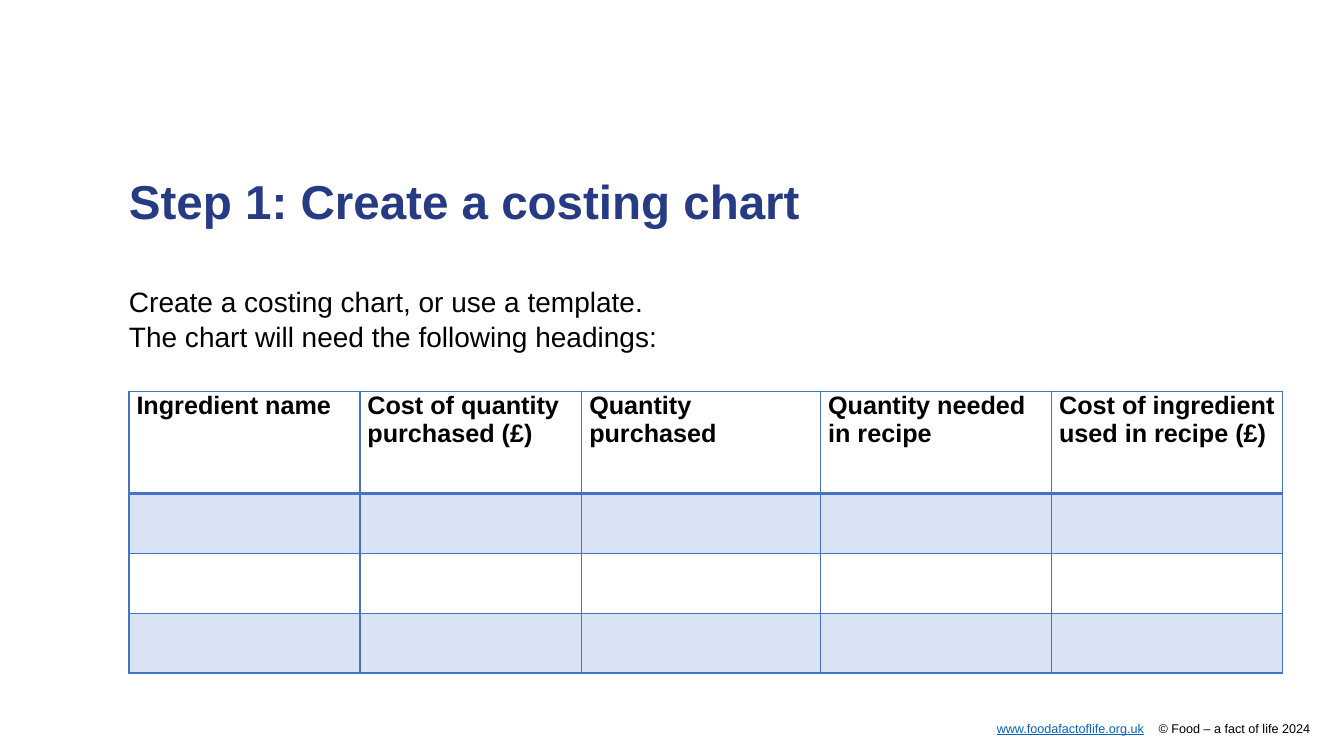
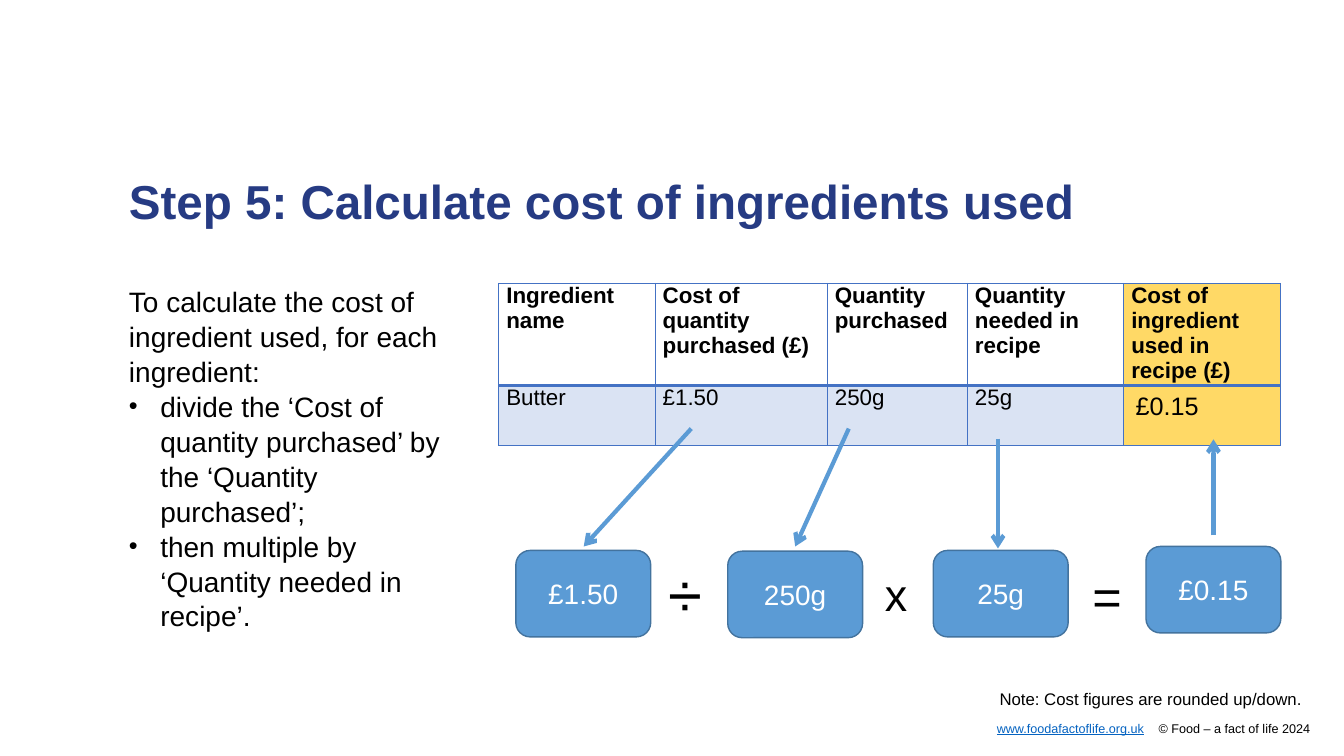
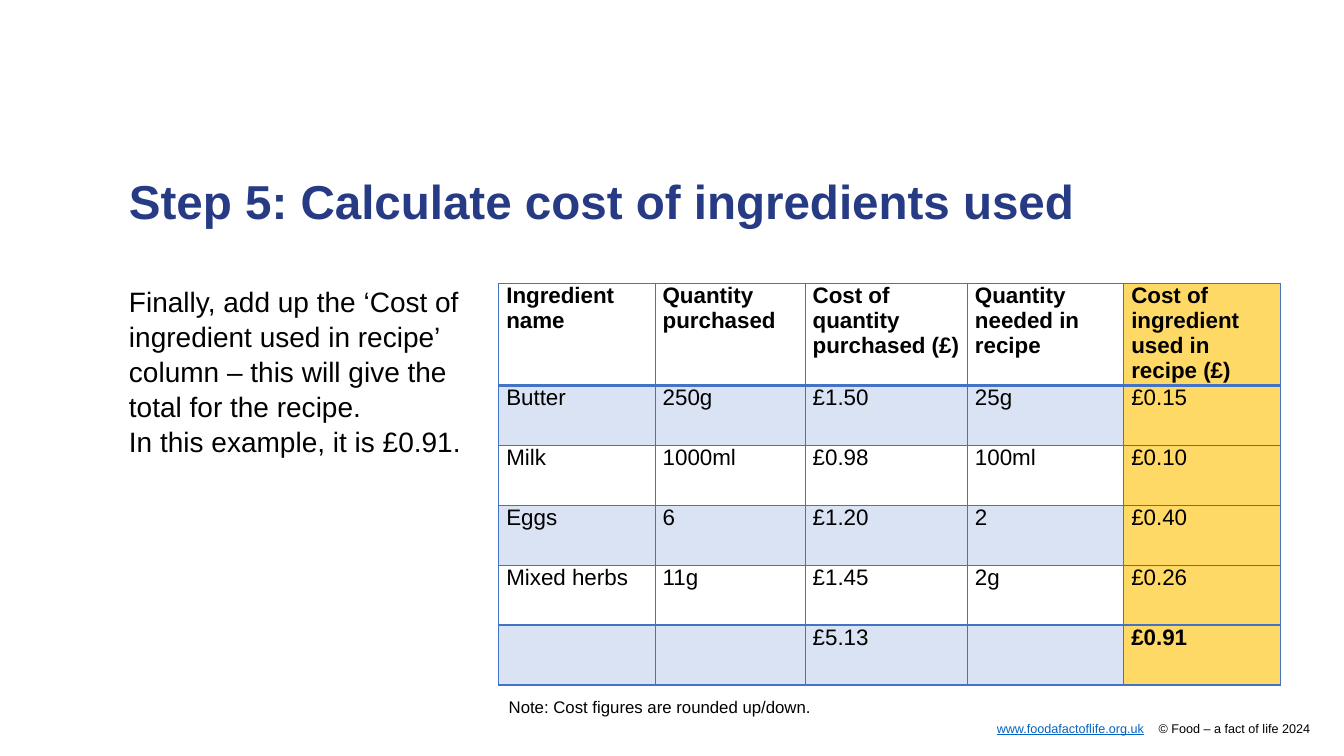
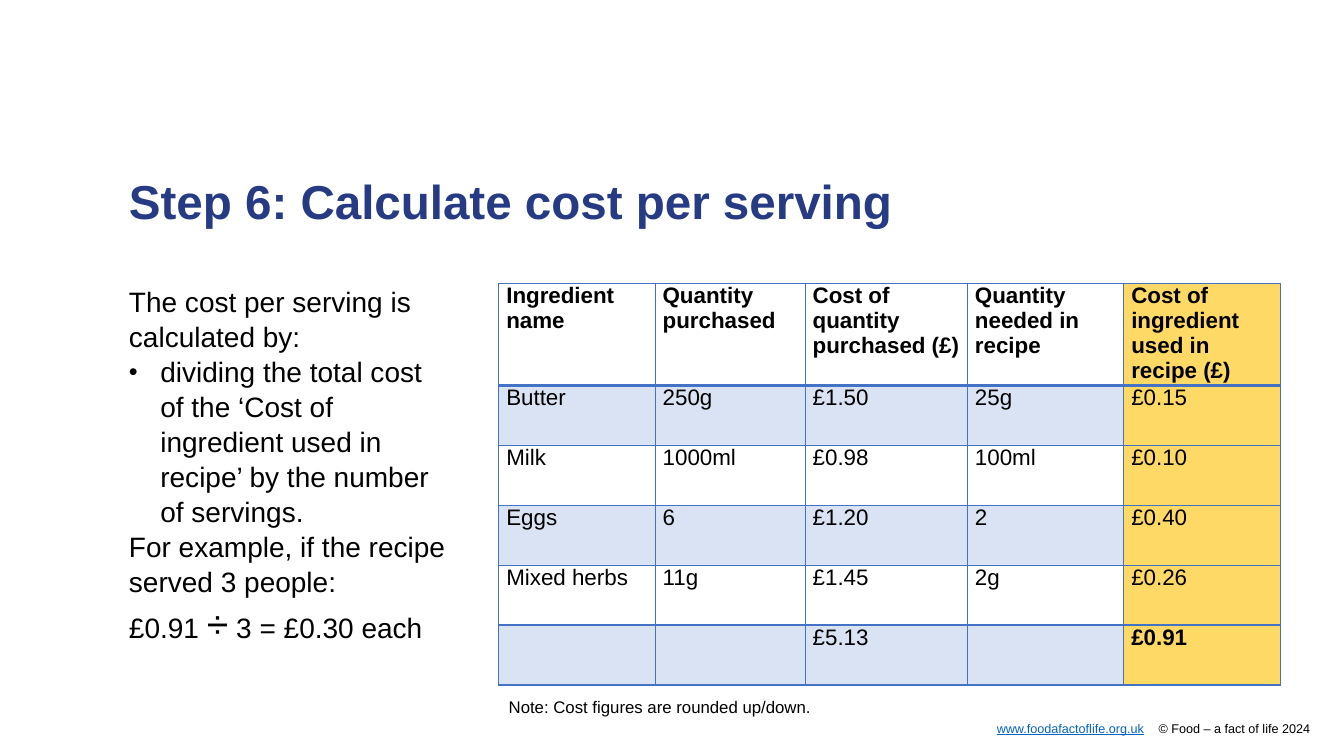
from lxml import etree
from pptx import Presentation
from pptx import util as u
from pptx.dml import color
from pptx.enum import shapes, text
from pptx.oxml import ns

NAVY, BLACK, WHITE, LINK = "263B83", "000000", "FFFFFF", "0563C1"
GRID, BAND, GOLD = "4472C4", "DAE3F3", "FFD966"
BLUE, EDGE = "5B9BD5", "43739E"
LEFT, TOP = 3.25, 7.14
SIDE = 12.57


def ink(code):
    return color.RGBColor.from_string(code)


def write(frame, lines, size, tint=BLACK, bold=False, space=None, inset=None):
    """Fill a frame; a line is a string or (text, size) pairs, '• ' makes a bullet."""
    if inset is not None:
        for side in ("left", "top", "right", "bottom"):
            setattr(frame, "margin_" + side, u.Cm(inset))
    for i, line in enumerate(lines):
        para = frame.paragraphs[0] if i == 0 else frame.add_paragraph()
        runs = [(line, size)] if isinstance(line, str) else line
        if space:
            form = {"alignment": text.PP_ALIGN.LEFT, "line_spacing": space,
                    "space_before": u.Pt(0)}
            for key, val in form.items():
                setattr(para, key, val)
        if runs[0][0].startswith("• "):
            runs = [(runs[0][0][2:], size)]
            props = para._p.get_or_add_pPr()
            props.set("marL", str(u.Cm(0.79)))
            props.set("indent", str(u.Cm(-0.79)))
            etree.SubElement(props, ns.qn("a:buSzPct"), val="90000")
            etree.SubElement(props, ns.qn("a:buChar"), char="•")
        for words, pts in runs:
            run = para.add_run()
            run.text = words
            form = {"name": "Arial", "size": u.Pt(pts), "bold": bold}
            for key, val in form.items():
                setattr(run.font, key, val)
            run.font.color.rgb = ink(tint)


NAME, COST, BOUGHT = "Ingredient name", "Cost of quantity purchased (£)", "Quantity purchased"
NEED, USED = "Quantity needed in recipe", "Cost of ingredient used in recipe (£)"
NOTE = "Note: Cost figures are rounded up/down."

totals = {
    "left": SIDE, "top": TOP, "size": 16, "gold": True,
    "cols": [3.94, 3.78, 4.09, 3.94, 3.94],
    "rows": [
        [NAME, BOUGHT, COST, NEED, USED],
        ["Butter", "250g", "£1.50", "25g", "£0.15"],
        ["Milk", "1000ml", "£0.98", "100ml", "£0.10"],
        ["Eggs", "6", "£1.20", "2", "£0.40"],
        ["Mixed herbs", "11g", "£1.45", "2g", "£0.26"],
        ["", "", "£5.13", "", "£0.91"],
    ],
}
blank = {
    "left": LEFT, "top": 9.86, "size": 18, "gold": False,
    "cols": [5.82, 5.59, 6.02, 5.82, 5.82],
    "rows": [[NAME, COST, BOUGHT, NEED, USED]] + [[""] * 5] * 3,
}
butter = {
    "left": SIDE, "top": TOP, "size": 16, "gold": True,
    "cols": [3.94, 4.34, 3.53, 3.94, 3.94],
    "rows": [[NAME, COST, BOUGHT, NEED, USED],
             ["Butter", "£1.50", "250g", "25g", ""]],
}

# Title, body width, body lines, table, labels as (text, x, y, width, size)
pages = [
    ("Step 1: Create a costing chart", 23.27,
     ["Create a costing chart, or use a template.",
      "The chart will need the following headings:"],
     blank, []),
    ("Step 5: Calculate cost of ingredients used", 8.05,
     ["To calculate the cost of ingredient used, for each ingredient:",
      "• divide the ‘Cost of quantity purchased’ by the ‘Quantity purchased’;",
      "• then multiple by ‘Quantity needed in recipe’."],
     butter,
     [("÷", 16.61, 13.89, 1.6, 44), ("x", 22.05, 14.15, 1.6, 32),
      ("=", 27.28, 14.12, 1.6, 36), ("£0.15", 28.37, 9.7, 3.05, 18),
      (NOTE, 24.94, 17.22, 8.2, 12)]),
    ("Step 5: Calculate cost of ingredients used", 8.69,
     ["Finally, add up the ‘Cost of ingredient used in recipe’ column – this will "
      "give the total for the recipe.",
      "In this example, it is £0.91."],
     totals, [(NOTE, SIDE, 17.42, 9.07, 12)]),
    ("Step 6: Calculate cost per serving", 8.05,
     ["The cost per serving is calculated by:",
      "• dividing the total cost of the ‘Cost of ingredient used in recipe’ by the "
      "number of servings.",
      "For example, if the recipe served 3 people:",
      [("£0.91 ", 20), ("÷", 28), (" 3 = £0.30 each", 20)]],
     totals, [(NOTE, SIDE, 17.42, 9.07, 12)]),
]

deck = Presentation()
deck.slide_width, deck.slide_height = u.Cm(33.87), u.Cm(19.05)
layout = deck.slide_layouts[0]
slides = []

for title, width, lines, grid, labels in pages:
    slide = deck.slides.add_slide(layout)
    slides.append(slide)
    head, body = slide.placeholders
    for shape, top, wide, high in ((head, 4.34, 27, 2), (body, TOP, width, 10)):
        shape.left, shape.top = u.Cm(LEFT), u.Cm(top)
        shape.width, shape.height = u.Cm(wide), u.Cm(high)
        form = {"word_wrap": True, "auto_size": text.MSO_AUTO_SIZE.NONE,
                "vertical_anchor": text.MSO_ANCHOR.TOP}
        for key, val in form.items():
            setattr(shape.text_frame, key, val)
    write(head.text_frame, [title], 34, NAVY, True, space=1.0, inset=0)
    write(body.text_frame, lines, 20, space=1.04, inset=0)

    rows, cols = grid["rows"], grid["cols"]
    heights = [2.57] + [1.51] * (len(rows) - 1)
    table = slide.shapes.add_table(
        len(rows), len(cols), u.Cm(grid["left"]), u.Cm(grid["top"]),
        u.Cm(sum(cols)), u.Cm(sum(heights))).table
    table.first_row = table.horz_banding = False
    for col, wide in zip(table.columns, cols):
        col.width = u.Cm(wide)
    for r, row in enumerate(rows):
        table.rows[r].height = u.Cm(heights[r])
        for c, words in enumerate(row):
            cell = table.cell(r, c)
            cell.margin_left = cell.margin_right = u.Cm(0.19)
            cell.margin_top = cell.margin_bottom = 0
            props = cell._tc.get_or_add_tcPr()
            for side in "LRTB":
                thick = (side, r) in (("B", 0), ("T", 1))
                edge = etree.SubElement(props, ns.qn("a:ln" + side),
                                        w=str(u.Pt(2 if thick else 1)))
                fill = etree.SubElement(edge, ns.qn("a:solidFill"))
                etree.SubElement(fill, ns.qn("a:srgbClr"), val=GRID)
            gold = grid["gold"] and c == len(cols) - 1
            cell.fill.solid()
            cell.fill.fore_color.rgb = ink(GOLD if gold else BAND if r % 2 else WHITE)
            if words:
                write(cell.text_frame, [words], grid["size"],
                      bold=r == 0 or (gold and r == 5))

    for words, x, y, wide, size in labels:
        label = slide.shapes.add_textbox(u.Cm(x), u.Cm(y), u.Cm(wide), u.Cm(size * 0.05))
        label.text_frame.word_wrap = True
        write(label.text_frame, [words], size)

# Sum under the butter row
sums = slides[1].shapes
for words, x, y in (("£1.50", 13, 13.87), ("250g", 18.34, 13.89),
                    ("25g", 23.52, 13.87), ("£0.15", 28.88, 13.77)):
    box = sums.add_shape(shapes.MSO_SHAPE.ROUNDED_RECTANGLE,
                         u.Cm(x), u.Cm(y), u.Cm(3.4), u.Cm(2.18))
    box.shadow.inherit = False
    box.fill.solid()
    box.fill.fore_color.rgb = ink(BLUE)
    box.line.color.rgb = ink(EDGE)
    box.line.width = u.Pt(1)
    box.text_frame.vertical_anchor = text.MSO_ANCHOR.MIDDLE
    write(box.text_frame, [words], 20, WHITE)
    box.text_frame.paragraphs[0].alignment = text.PP_ALIGN.CENTER

for ends in ((17.42, 10.8, 14.71, 13.77), (21.39, 10.8, 20.04, 13.77),
             (25.15, 11.05, 25.15, 13.82), (30.58, 13.49, 30.58, 11.07)):
    arrow = sums.add_connector(shapes.MSO_CONNECTOR.STRAIGHT, *map(u.Cm, ends))
    arrow.line.color.rgb = ink(BLUE)
    arrow.line.width = u.Pt(3)
    props = arrow.element.spPr
    etree.SubElement(props.get_or_add_ln(), ns.qn("a:tailEnd"), type="arrow")
    etree.SubElement(props, ns.qn("a:effectLst"))

# Footer, moved to the layout so that every slide shows it
foot = sums.add_textbox(u.Cm(25.12), u.Cm(18.16), u.Cm(7.9), u.Cm(0.38))
props = foot.text_frame.paragraphs[0]._p.get_or_add_pPr()
tabs = etree.SubElement(props, ns.qn("a:tabLst"))
etree.SubElement(tabs, ns.qn("a:tab"), pos=str(u.Cm(4.08)), algn="l")
write(foot.text_frame, [[("www.foodafactoflife.org.uk", 9),
                         ("\t© Food – a fact of life 2024", 9)]], 9, inset=0)
link = foot.text_frame.paragraphs[0].runs[0].font
link.underline = True
link.color.rgb = ink(LINK)
layout.shapes.element.append(foot.element)

deck.save("out.pptx")
